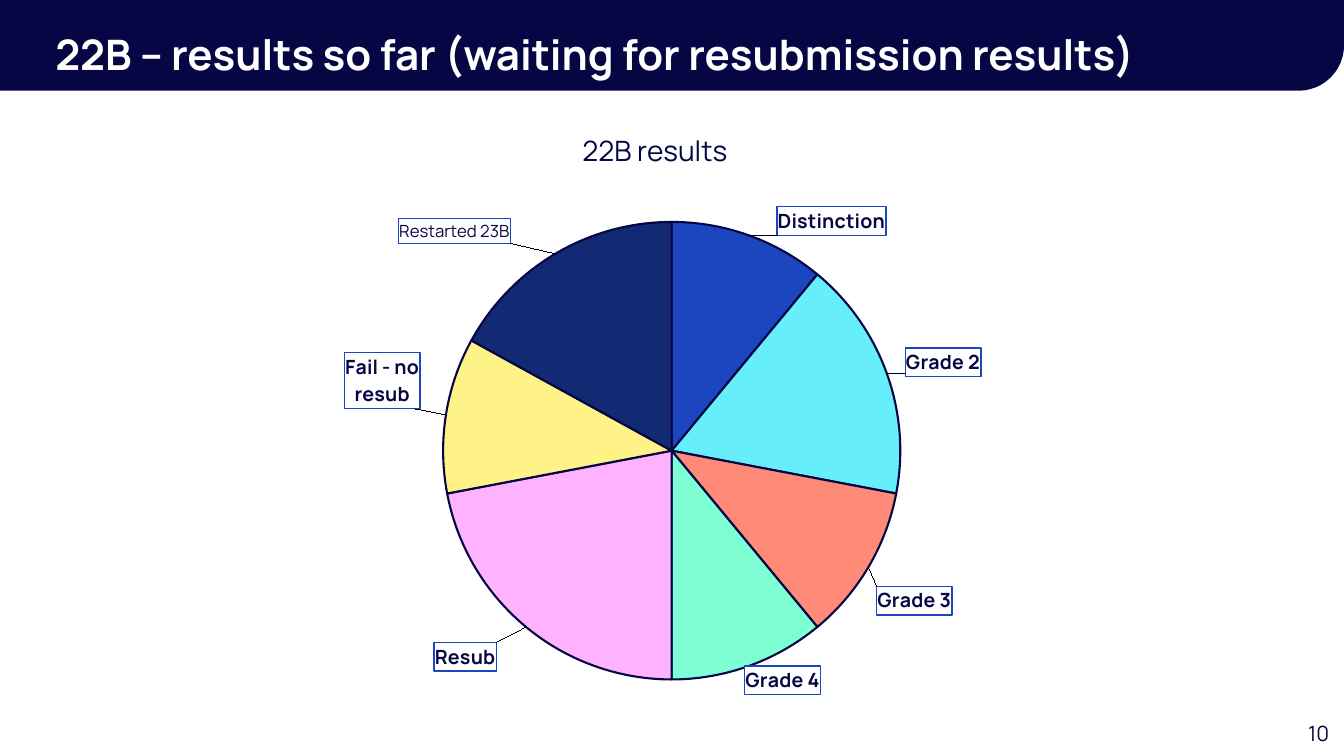
from lxml import etree
from pptx import Presentation
from pptx.chart.data import CategoryChartData
from pptx.dml.color import RGBColor
from pptx.enum.chart import XL_CHART_TYPE as ChartType, XL_LABEL_POSITION as LabelPosition
from pptx.enum.shapes import MSO_SHAPE as Shape
from pptx.enum.text import PP_ALIGN as Align
from pptx.oxml import parse_xml
from pptx.oxml.ns import nsdecls, qn
from pptx.util import Inches, Pt

NAVY = RGBColor(0x06, 0x06, 0x45)
WHITE = RGBColor(0xFF, 0xFF, 0xFF)
BLUE = RGBColor(0x1C, 0x46, 0xC0)
FONT = "Manrope"

# words, box (left, top, width, height), alignment, line spacing, font
TEXTS = [
    ("10", (12.59, 7.1, 0.69, 0.35), Align.RIGHT, 1.0,
     {"size": Pt(15), "bold": False}, NAVY),
    ("22B – results so far (waiting for resubmission results)", (0.45, 0.18, 11.77, 0.54),
     Align.LEFT, 1.1, {"size": Pt(30), "bold": True}, WHITE),
    ("22B results", (5.54, 1.24, 1.91, 0.54), Align.CENTER, 1.1,
     {"size": Pt(20), "bold": False}, NAVY),
]
# grade, percent, slice colour, label shift as a share of the chart (x, y)
GRADES = [
    ("Distinction", 11, "1C46C0", (0.04, 0.01)),
    ("Grade 2", 17, "66EEFA", (0.02, 0.01)),
    ("Grade 3", 11, "FF8A77", (0.005, 0.03)),
    ("Grade 4", 11, "7DFFD3", (-0.01, -0.01)),
    ("Resub", 22, "FFB3FF", (-0.04, 0.02)),
    ("Fail - no resub", 11, "FFF388", (-0.04, -0.01)),
    ("Restarted 23B", 17, "112A73", (-0.065, -0.01)),
]
LIGHT_LABEL = "Restarted 23B"
CHART_BOX = (3.41, 1.8, 6.44, 5.36)
PIE_CENTRE = (6.66, 4.47)
PIE_RADIUS = 2.27


def set_font(font, color, formats):
    for name, value in {"name": FONT, **formats}.items():
        setattr(font, name, value)
    font.color.rgb = color


def add_text(slide, words, box, align, spacing, formats, color):
    frame = slide.shapes.add_textbox(*map(Inches, box)).text_frame
    frame.word_wrap = True
    paragraph = frame.paragraphs[0]
    paragraph.text = words
    paragraph.alignment = align
    paragraph.line_spacing = spacing
    set_font(paragraph.runs[0].font, color, formats)


def layout_xml(values):
    parts = "".join(f'<c:{tag} val="{value}"/>' for tag, value in values)
    return (f'<c:layout {nsdecls("c")}><c:manualLayout>{parts}'
            '</c:manualLayout></c:layout>')


def add_banner(slide):
    banner = slide.shapes.add_shape(Shape.ROUND_1_RECTANGLE, Inches(-0.01), 0,
                                    Inches(13.34), Inches(0.9))
    banner.adjustments[0] = 0.5
    banner.shadow.inherit = False
    banner.fill.solid()
    banner.fill.fore_color.rgb = NAVY
    banner.line.fill.background()
    banner._element.spPr.xfrm.set("flipV", "1")


def style_label(point, grade, shift):
    """Give one slice its boxed label, moved away from the rim."""
    label = point.data_label
    light = grade == LIGHT_LABEL
    formats = {"size": Pt(12 if light else 14), "bold": not light}
    if light:
        label.text_frame.text = grade
        set_font(label.text_frame.paragraphs[0].runs[0].font, NAVY, formats)
    else:
        set_font(label.font, NAVY, formats)
    label.position = LabelPosition.OUTSIDE_END
    element = label._dLbl
    for tag, shown in (("showCatName", "1"), ("showVal", "0"), ("showPercent", "0")):
        element.find(qn(f"c:{tag}")).set("val", shown)
    for old in element.findall(qn("c:layout")):
        element.remove(old)
    element.insert(1, parse_xml(layout_xml(zip("xy", shift))))
    frame = parse_xml(
        f'<c:spPr {nsdecls("c", "a")}>'
        f'<a:solidFill><a:srgbClr val="{WHITE}"/></a:solidFill>'
        f'<a:ln w="12700"><a:solidFill><a:srgbClr val="{BLUE}"/></a:solidFill></a:ln></c:spPr>')
    following = element.find(qn("c:txPr"))
    if following is None:
        following = element.find(qn("c:dLblPos"))
    following.addprevious(frame)


def add_pie(slide):
    results = CategoryChartData()
    results.categories = [grade for grade, *_ in GRADES]
    results.add_series("Series 1", [percent for _, percent, *_ in GRADES])
    chart = slide.shapes.add_chart(ChartType.PIE, *map(Inches, CHART_BOX), results).chart
    chart.has_legend = False
    chart.has_title = False
    set_font(chart.font, NAVY, {"size": Pt(10)})

    plot = chart.plots[0]
    plot.vary_by_categories = True
    series = plot.series[0]
    labels = series.data_labels
    labels.show_category_name = True
    labels.show_value = False
    labels.position = LabelPosition.OUTSIDE_END
    set_font(labels.font, NAVY, {"size": Pt(14), "bold": True})
    leaders = labels._element.find(qn("c:showLeaderLines"))
    if leaders is None:
        leaders = etree.SubElement(labels._element, qn("c:showLeaderLines"))
    leaders.set("val", "1")

    for index, (grade, _, color, shift) in enumerate(GRADES):
        point = series.points[index]
        point.format.fill.solid()
        point.format.fill.fore_color.rgb = RGBColor.from_string(color)
        point.format.line.color.rgb = NAVY
        point.format.line.width = Pt(1.5)
        style_label(point, grade, shift)

    left, top, width, height = CHART_BOX
    place = [("layoutTarget", "inner"), ("xMode", "edge"), ("yMode", "edge"),
             ("x", round((PIE_CENTRE[0] - PIE_RADIUS - left) / width, 3)),
             ("y", round((PIE_CENTRE[1] - PIE_RADIUS - top) / height, 3)),
             ("w", round(2 * PIE_RADIUS / width, 3)),
             ("h", round(2 * PIE_RADIUS / height, 3))]
    area = chart._chartSpace.chart.plotArea
    for old in area.findall(qn("c:layout")):
        area.remove(old)
    area.insert(0, parse_xml(layout_xml(place)))


def main():
    deck = Presentation()
    deck.slide_width, deck.slide_height = Inches(13.33), Inches(7.5)
    slide = deck.slides.add_slide(deck.slide_layouts[6])
    add_banner(slide)
    for text in TEXTS:
        add_text(slide, *text)
    add_pie(slide)
    deck.save("out.pptx")


if __name__ == "__main__":
    main()
